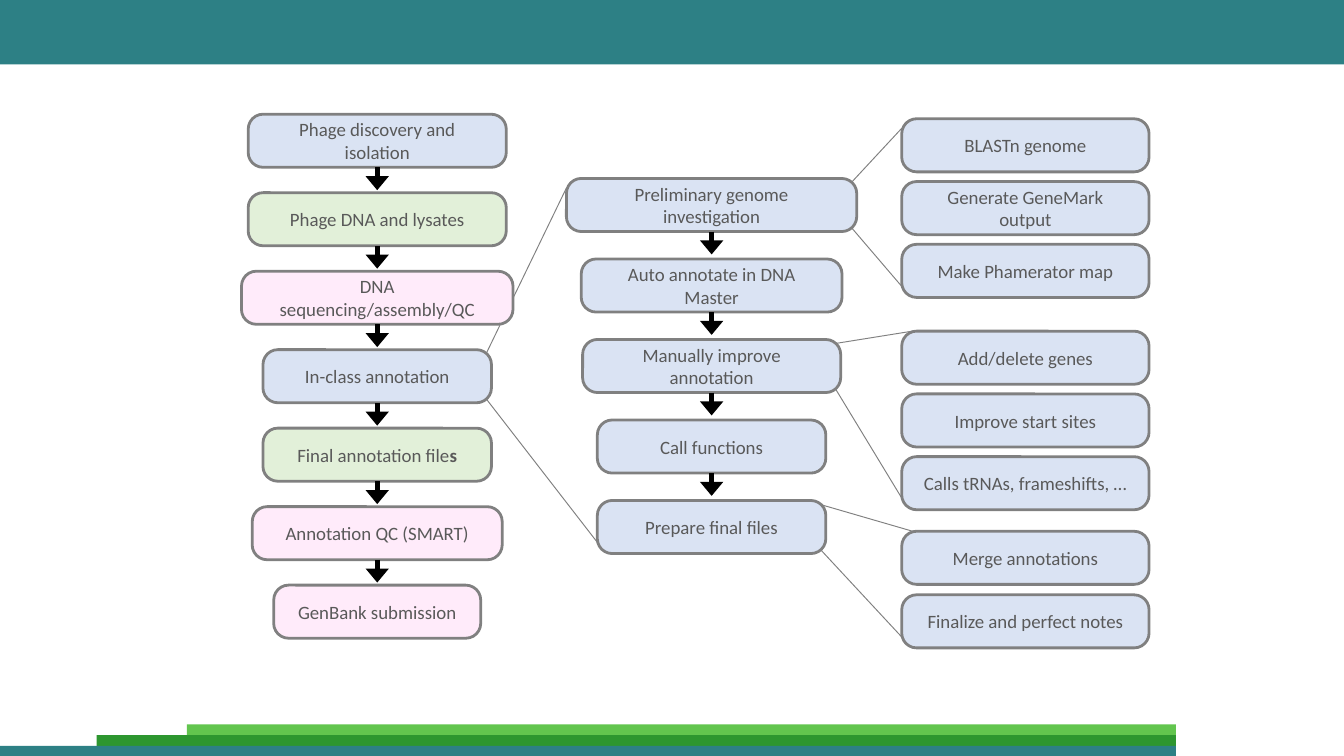
from dataclasses import dataclass

from lxml import etree
from pptx import Presentation
from pptx.dml.color import RGBColor
from pptx.enum.shapes import MSO_CONNECTOR, MSO_SHAPE
from pptx.enum.text import MSO_ANCHOR, PP_ALIGN
from pptx.oxml.ns import qn
from pptx.util import Inches, Pt

STRAIGHT = MSO_CONNECTOR.STRAIGHT
RECTANGLE, ROUNDED = MSO_SHAPE.RECTANGLE, MSO_SHAPE.ROUNDED_RECTANGLE
MIDDLE, CENTER = MSO_ANCHOR.MIDDLE, PP_ALIGN.CENTER
BOTTOM_SIDE = 2

TEAL = RGBColor(0x2D, 0x80, 0x85)
GREEN = RGBColor(0x2D, 0x96, 0x2F)
LIGHT_GREEN = RGBColor(0x62, 0xC5, 0x4E)
BLUE_TINT = RGBColor(0xDA, 0xE3, 0xF3)
GREEN_TINT = RGBColor(0xE2, 0xF0, 0xD9)
PINK_TINT = RGBColor(0xFF, 0xEB, 0xFA)
GRAY = RGBColor(0x80, 0x80, 0x80)
TEXT_GRAY = RGBColor(0x59, 0x59, 0x59)
BLACK = RGBColor(0, 0, 0)

COLUMNS, ROWS = 100, 56.25
STEP_ROWS, ARROW_ROWS = 3.95, 1.7
LABEL_FORMAT = {"name": "Calibri", "size": Pt(10.1)}
FRAME_FORMAT = {
    "word_wrap": True,
    "vertical_anchor": MIDDLE,
    "margin_left": Inches(0.12),
    "margin_right": Inches(0.12),
}


@dataclass(frozen=True)
class Step:
    label: str
    left: float
    top: float
    width: float
    tint: RGBColor = BLUE_TINT
    bold_end: str = ""

    @property
    def center(self):
        return self.left + self.width / 2

    @property
    def right(self):
        return self.left + self.width

    @property
    def bottom(self):
        return self.top + STEP_ROWS


class FlowSlide:
    def __init__(self, deck):
        self.slide = deck.slides.add_slide(deck.slide_layouts[6])
        self.column = deck.slide_width / COLUMNS
        self.row = deck.slide_height / ROWS

    def point(self, column, row):
        return round(column * self.column), round(row * self.row)

    def block(self, kind, left, top, width, height, fill):
        block = self.slide.shapes.add_shape(
            kind, *self.point(left, top), *self.point(width, height))
        block.shadow.inherit = False
        block.fill.solid()
        block.fill.fore_color.rgb = fill
        return block

    def band(self, left, top, width, height, fill):
        self.block(RECTANGLE, left, top, width, height, fill).line.fill.background()

    def step(self, step):
        box = self.block(ROUNDED, step.left, step.top, step.width, STEP_ROWS, step.tint)
        box.adjustments[0] = 0.28
        box.line.color.rgb = GRAY
        box.line.width = Pt(1.5)
        frame = box.text_frame
        for name, value in FRAME_FORMAT.items():
            setattr(frame, name, value)
        paragraph = frame.paragraphs[0]
        paragraph.alignment = CENTER
        for text, bold in ((step.label, False), (step.bold_end, True)):
            if text:
                run = paragraph.add_run()
                run.text = text
                for name, value in {**LABEL_FORMAT, "bold": bold}.items():
                    setattr(run.font, name, value)
                run.font.color.rgb = TEXT_GRAY
        return box

    def line(self, start, end, color, width):
        line = self.slide.shapes.add_connector(
            STRAIGHT, *self.point(*start), *self.point(*end))
        line.line.color.rgb = color
        line.line.width = Pt(width)
        etree.SubElement(line._element.spPr, qn("a:effectLst"))
        return line

    def arrow(self, step, box):
        arrow = self.line((step.center, step.bottom),
                          (step.center, step.bottom + ARROW_ROWS), BLACK, 2.5)
        arrow.begin_connect(box, BOTTOM_SIDE)
        etree.SubElement(arrow.line._get_or_add_ln(), qn("a:tailEnd"),
                         type="triangle", w="lg", len="med")

    def callout(self, source, first, last, entry):
        inset, drop = entry
        lines = (
            ((source.right - 0.4, source.top + 0.3), (first.left + inset, first.top + drop)),
            ((source.right - 0.4, source.bottom - 0.3), (last.left + 0.1, last.bottom - 0.7)),
        )
        for start, end in lines:
            self.line(start, end, GRAY, 0.5)

    def flow(self, steps):
        boxes = [self.step(step) for step in steps]
        for step, box in zip(steps[:-1], boxes):
            self.arrow(step, box)


def stack(center, top, pitch, entries):
    return [Step(label, center - width / 2, top + i * pitch, width, *style)
            for i, (label, width, *style) in enumerate(entries)]


def details(top, pitch, labels):
    return stack(76.3, top, pitch, [(label, 18.4) for label in labels])


def main():
    deck = Presentation()
    deck.slide_width = Inches(10)
    deck.slide_height = deck.slide_width * 9 // 16
    page = FlowSlide(deck)

    for band in (
        (0, 0, 100, 4.8, TEAL),
        (13.9, 53.9, 73.6, 1, LIGHT_GREEN),
        (7.2, 54.7, 80.3, 1.1, GREEN),
        (0, 55.5, 87.5, 0.9, TEAL),
    ):
        page.band(*band)

    project = stack(28.07, 8.5, 5.84, [
        ("Phage discovery and isolation", 19.2),
        ("Phage DNA and lysates", 19.2, GREEN_TINT),
        ("DNA sequencing/assembly/QC", 20.2, PINK_TINT),
        ("In-class annotation", 17),
        ("Final annotation file", 17, GREEN_TINT, "s"),
        ("Annotation QC (SMART)", 18.6, PINK_TINT),
        ("GenBank submission", 15.4, PINK_TINT),
    ])
    annotation = stack(52.95, 13.28, 5.99, [
        ("Preliminary genome investigation", 21.6),
        ("Auto annotate in DNA Master", 19.4),
        ("Manually improve annotation", 19.2),
        ("Call functions", 17),
        ("Prepare final files", 17),
    ])
    investigation = details(8.84, 4.67, [
        "BLASTn genome", "Generate GeneMark output", "Make Phamerator map"])
    improvement = details(24.64, 4.67, [
        "Add/delete genes", "Improve start sites", "Calls tRNAs, frameshifts, …"])
    final_files = details(39.53, 4.73, ["Merge annotations", "Finalize and perfect notes"])

    from_side, from_top = (0, 0.7), (0.8, 0)
    for source, target, entry in (
        (project[3], annotation, from_side),
        (annotation[0], investigation, from_side),
        (annotation[2], improvement, from_top),
        (annotation[4], final_files, from_top),
    ):
        page.callout(source, target[0], target[-1], entry)

    page.flow(project)
    page.flow(annotation)
    for detail in investigation + improvement + final_files:
        page.step(detail)

    deck.save("out.pptx")


if __name__ == "__main__":
    main()
